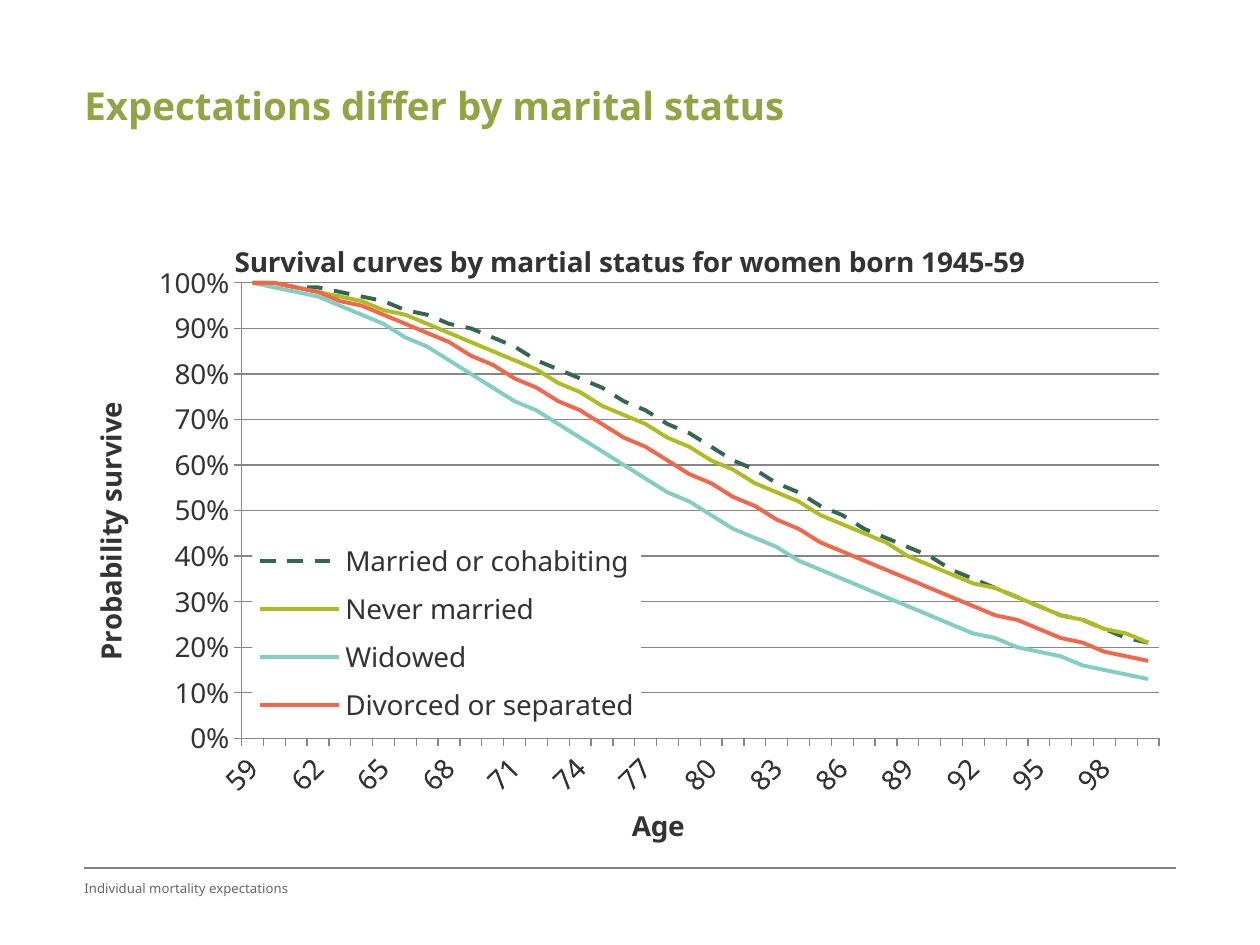
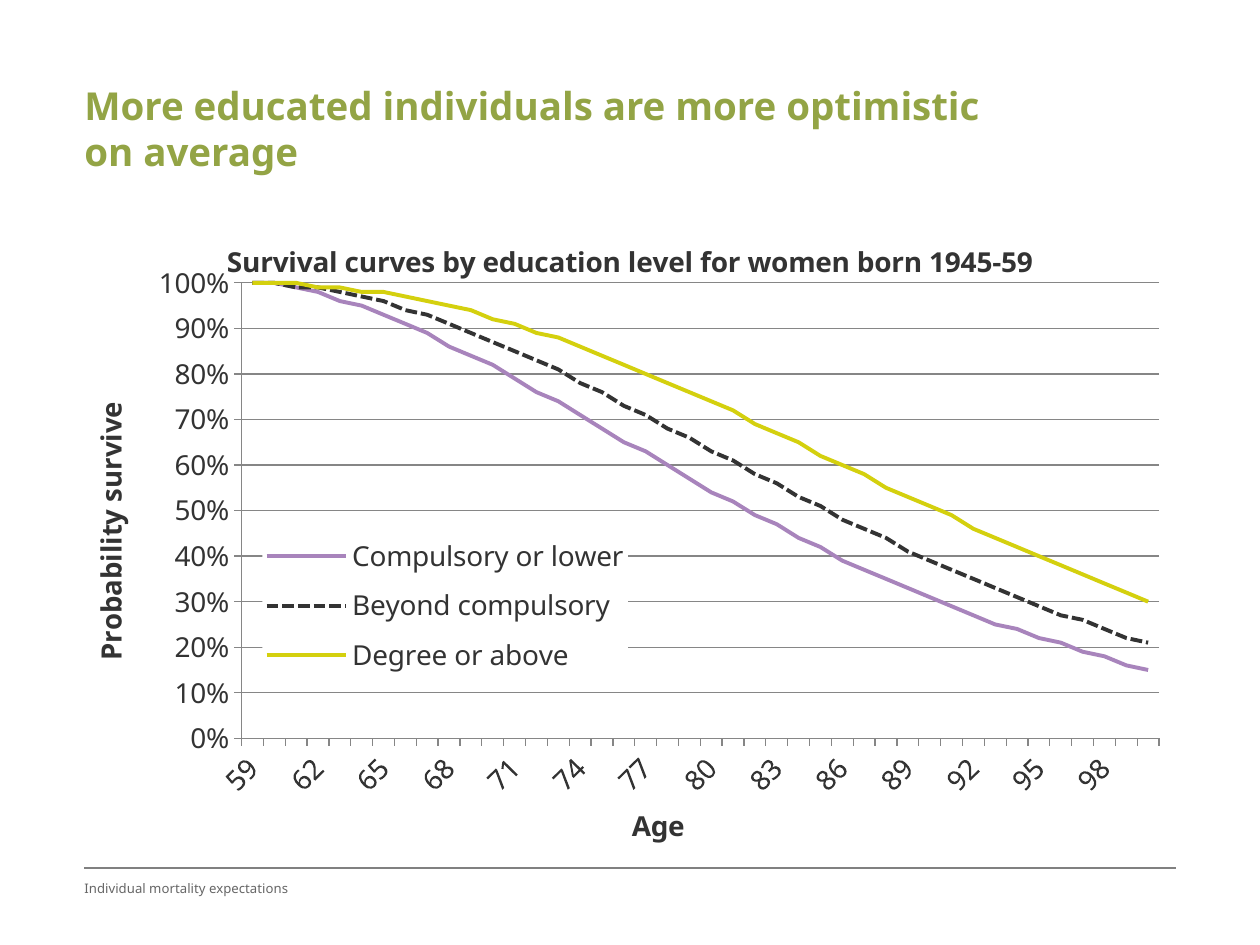
from dataclasses import dataclass

from pptx import Presentation
from pptx.chart.data import CategoryChartData
from pptx.dml.color import RGBColor
from pptx.enum.chart import XL_CHART_TYPE, XL_LEGEND_POSITION, XL_MARKER_STYLE, XL_TICK_MARK
from pptx.enum.dml import MSO_LINE
from pptx.enum.shapes import MSO_CONNECTOR
from pptx.oxml import parse_xml
from pptx.oxml.ns import nsdecls, qn
from pptx.util import Inches, Pt

LINE_CHART = XL_CHART_TYPE.LINE
LEGEND_RIGHT = XL_LEGEND_POSITION.RIGHT
NO_MARKER = XL_MARKER_STYLE.NONE
TICK_OUTSIDE = XL_TICK_MARK.OUTSIDE
SOLID, DASH, SHORT_DASH = MSO_LINE.SOLID, MSO_LINE.DASH, MSO_LINE.SQUARE_DOT
STRAIGHT = MSO_CONNECTOR.STRAIGHT


@dataclass(frozen=True)
class Theme:
    font: str = "Noto Sans"
    heading: str = "93A445"
    text: str = "333333"
    footer: str = "666666"
    rule: str = "808080"
    grid: str = "868686"
    legend_fill: str = "FFFFFF"
    heading_size: float = 22
    chart_size: float = 16
    footer_size: float = 7.5
    rule_width: float = 0.75
    curve_width: float = 2.25
    left: float = 0.67
    width: float = 8.66


THEME = Theme()
AGES = [str(age) for age in range(59, 101)]
FOOTER = "Individual mortality expectations"
PLOT_LAYOUT = (14.4, 10.4, 84.1, 72.9)

MARITAL_CURVES = [
    ("Married or cohabiting", "336750", DASH,
     [100, 100, 99, 99, 98, 97, 96, 94, 93, 91, 90, 88, 86, 83, 81, 79, 77, 74, 72, 69, 67,
      64, 61, 59, 56, 54, 51, 49, 46, 44, 42, 40, 37, 35, 33, 31, 29, 27, 26, 24, 22, 21]),
    ("Never married", "AFBC21", SOLID,
     [100, 100, 99, 98, 97, 96, 94, 93, 91, 89, 87, 85, 83, 81, 78, 76, 73, 71, 69, 66, 64,
      61, 59, 56, 54, 52, 49, 47, 45, 43, 40, 38, 36, 34, 33, 31, 29, 27, 26, 24, 23, 21]),
    ("Widowed", "82CEC1", SOLID,
     [100, 99, 98, 97, 95, 93, 91, 88, 86, 83, 80, 77, 74, 72, 69, 66, 63, 60, 57, 54, 52,
      49, 46, 44, 42, 39, 37, 35, 33, 31, 29, 27, 25, 23, 22, 20, 19, 18, 16, 15, 14, 13]),
    ("Divorced or separated", "F26649", SOLID,
     [100, 100, 99, 98, 96, 95, 93, 91, 89, 87, 84, 82, 79, 77, 74, 72, 69, 66, 64, 61, 58,
      56, 53, 51, 48, 46, 43, 41, 39, 37, 35, 33, 31, 29, 27, 26, 24, 22, 21, 19, 18, 17]),
]
EDUCATION_CURVES = [
    ("Compulsory or lower", "A884BC", SOLID,
     [100, 100, 99, 98, 96, 95, 93, 91, 89, 86, 84, 82, 79, 76, 74, 71, 68, 65, 63, 60, 57,
      54, 52, 49, 47, 44, 42, 39, 37, 35, 33, 31, 29, 27, 25, 24, 22, 21, 19, 18, 16, 15]),
    ("Beyond compulsory", "333333", SHORT_DASH,
     [100, 100, 99, 99, 98, 97, 96, 94, 93, 91, 89, 87, 85, 83, 81, 78, 76, 73, 71, 68, 66,
      63, 61, 58, 56, 53, 51, 48, 46, 44, 41, 39, 37, 35, 33, 31, 29, 27, 26, 24, 22, 21]),
    ("Degree or above", "D4D00E", SOLID,
     [100, 100, 100, 99, 99, 98, 98, 97, 96, 95, 94, 92, 91, 89, 88, 86, 84, 82, 80, 78, 76,
      74, 72, 69, 67, 65, 62, 60, 58, 55, 53, 51, 49, 46, 44, 42, 40, 38, 36, 34, 32, 30]),
]


def style_font(font, size, color, bold=False):
    font.name = THEME.font
    font.size = Pt(size)
    font.bold = bold
    font.color.rgb = RGBColor.from_string(color)


def style_line(line, color, width):
    line.color.rgb = RGBColor.from_string(color)
    line.width = Pt(width)


def add_text(page, text, top, width, height, size, color, bold=False):
    box = page.shapes.add_textbox(Inches(THEME.left), Inches(top), Inches(width), Inches(height))
    frame = box.text_frame
    frame.word_wrap = True
    frame.margin_left = frame.margin_top = frame.margin_right = frame.margin_bottom = 0
    frame.text = text
    style_font(frame.paragraphs[0].runs[0].font, size, color, bold)


def add_footer_rule(page):
    y = Inches(6.89)
    rule = page.shapes.add_connector(
        STRAIGHT, Inches(THEME.left), y, Inches(THEME.left + THEME.width), y)
    style_line(rule.line, THEME.rule, THEME.rule_width)
    rule._element.spPr.append(parse_xml(f'<a:effectLst {nsdecls("a")}/>'))


def set_layout(element, percents, after=None, inner=False):
    for existing in element.findall(qn("c:layout")):
        element.remove(existing)
    target = '<c:layoutTarget val="inner"/>' if inner else ""
    modes = '<c:xMode val="edge"/><c:yMode val="edge"/>'
    sizes = "".join(f'<c:{key} val="{percent / 100:.3f}"/>'
                    for key, percent in zip("xywh", percents))
    layout = parse_xml(f'<c:layout {nsdecls("c")}><c:manualLayout>{target}{modes}{sizes}'
                       '</c:manualLayout></c:layout>')
    if after:
        element.find(qn(after)).addnext(layout)
    else:
        element.insert(0, layout)


def set_chart_text(title, text, position):
    title.text_frame.text = text
    style_font(title.text_frame.paragraphs[0].runs[0].font, THEME.chart_size, THEME.text, True)
    set_layout(title._element, position, after="c:tx")


def style_axis(axis, title, position):
    axis.major_tick_mark = TICK_OUTSIDE
    style_line(axis.format.line, THEME.grid, THEME.rule_width)
    style_font(axis.tick_labels.font, THEME.chart_size, THEME.text)
    set_chart_text(axis.axis_title, title, position)


def style_age_axis(axis):
    style_axis(axis, "Age", (49.7, 93.2))
    axis.has_major_gridlines = False
    labels = axis._element.find(qn("c:txPr")).find(qn("a:bodyPr"))
    labels.set("rot", "-2700000")
    labels.set("vert", "horz")
    last = axis._element.find(qn("c:noMultiLvlLbl"))
    for tag, step in (("tickLblSkip", 3), ("tickMarkSkip", 1)):
        last.addprevious(parse_xml(f'<c:{tag} {nsdecls("c")} val="{step}"/>'))


def style_probability_axis(axis):
    style_axis(axis, "Probability survive", (0, 29.3))
    axis.minimum_scale, axis.maximum_scale, axis.major_unit = 0, 1, 0.1
    axis.tick_labels.number_format = "0%"
    axis.tick_labels.number_format_is_linked = False
    axis.has_major_gridlines = True
    style_line(axis.major_gridlines.format.line, THEME.grid, THEME.rule_width)


def style_legend(chart, layout):
    chart.has_legend = True
    legend = chart.legend
    legend.position = LEGEND_RIGHT
    legend.include_in_layout = True
    style_font(legend.font, THEME.chart_size, THEME.text)
    set_layout(legend._element, layout, after="c:legendPos")
    legend._element.find(qn("c:txPr")).addprevious(parse_xml(
        f'<c:spPr {nsdecls("c", "a")}><a:solidFill><a:srgbClr val="{THEME.legend_fill}"/>'
        '</a:solidFill></c:spPr>'))


def add_survival_chart(page, title, title_x, curves, legend_layout):
    data = CategoryChartData(number_format="0%")
    data.categories = AGES
    for name, _, _, percents in curves:
        data.add_series(name, [percent / 100 for percent in percents])
    chart = page.shapes.add_chart(LINE_CHART, Inches(THEME.left), Inches(1.73),
                                  Inches(THEME.width), Inches(5.04), data).chart
    style_font(chart.font, THEME.chart_size, THEME.text)
    chart.has_title = True
    set_chart_text(chart.chart_title, title, (title_x, 2.9))
    style_age_axis(chart.category_axis)
    style_probability_axis(chart.value_axis)
    style_legend(chart, legend_layout)
    plot = chart.plots[0]
    plot.vary_by_categories = False
    set_layout(plot._element.getparent(), PLOT_LAYOUT, inner=True)
    for series, (_, color, dash, _) in zip(plot.series, curves):
        series.smooth = False
        series.marker.style = NO_MARKER
        style_line(series.format.line, color, THEME.curve_width)
        series.format.line.dash_style = dash


def add_page(deck, heading, *chart_parts):
    page = deck.slides.add_slide(deck.slide_layouts[6])
    add_footer_rule(page)
    add_text(page, heading, 0.65, 7.17, 0.44, THEME.heading_size, THEME.heading, True)
    add_survival_chart(page, *chart_parts)
    add_text(page, FOOTER, 6.99, 3.17, 0.4, THEME.footer_size, THEME.footer)


def main():
    deck = Presentation()
    deck.slide_width, deck.slide_height = Inches(10), Inches(7.5)
    add_page(deck, "Expectations differ by marital status",
             "Survival curves by martial status for women born 1945-59", 13.3,
             MARITAL_CURVES, (15.4, 50.2, 35.6, 32.6))
    add_page(deck, "More educated individuals are more optimistic on average",
             "Survival curves by education level for women born 1945-59", 12.6,
             EDUCATION_CURVES, (16.3, 49, 33.5, 26.1))
    deck.save("out.pptx")


if __name__ == "__main__":
    main()
